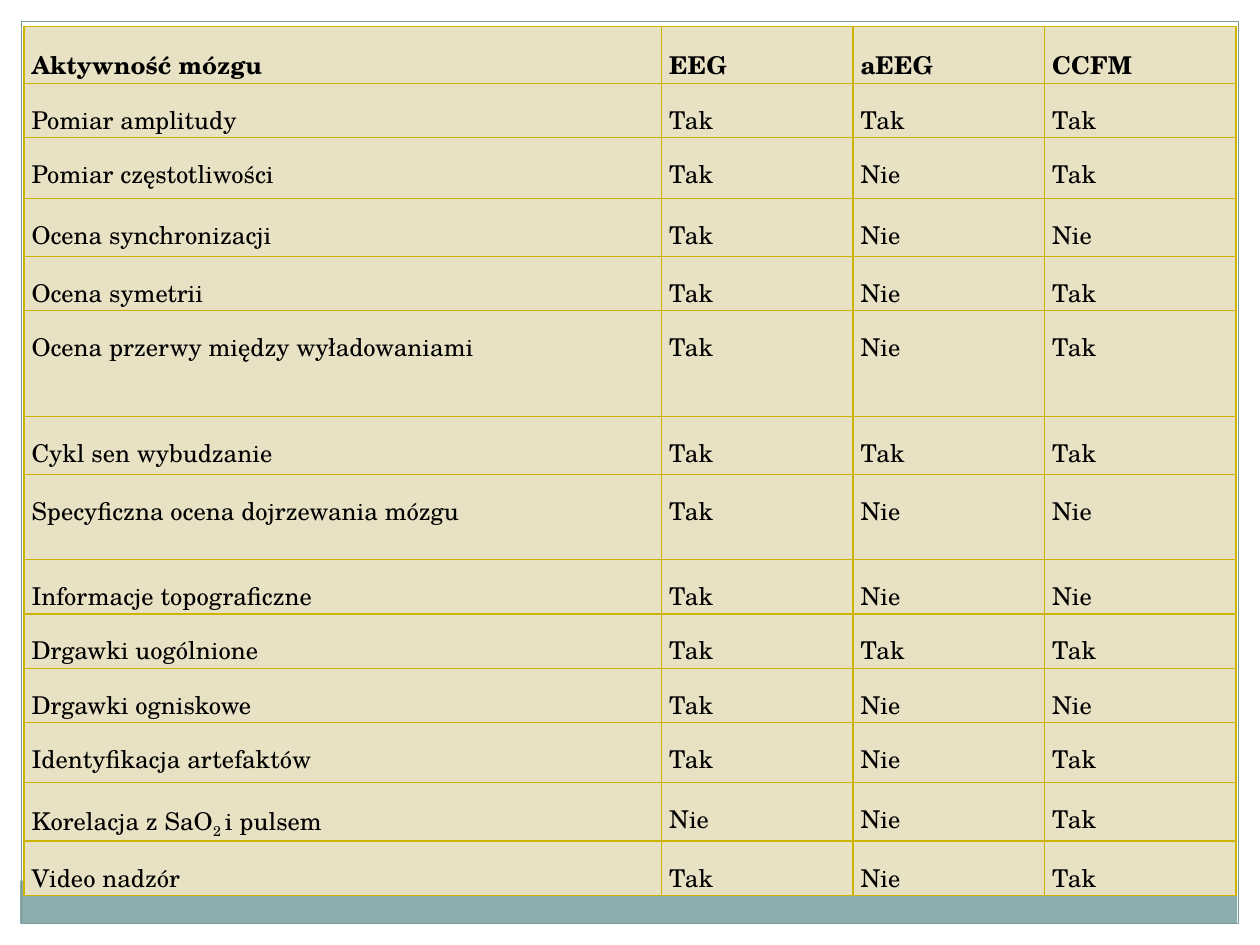
from pptx import Presentation
from pptx.dml.color import RGBColor as RGB
from pptx.enum.shapes import MSO_SHAPE as SHAPE
from pptx.oxml import parse_xml
from pptx.oxml.ns import nsdecls
from pptx.util import Inches, Pt

THEME = {
    "font": "TeX Gyre Schola",
    "size": Pt(14),
    "text": RGB.from_string("000000"),
    "cell": RGB.from_string("E8E1C4"),
    "margin": RGB.from_string("FFFFFF"),
    "band": RGB.from_string("8CADAE"),
    "frame": RGB.from_string("7C999A"),
    "grid": "CCB400",
}
SUBSCRIPT = "-25000"
MARGINS = [(0, 0, 10, 0.17), (9.83, 0, 0.17, 7.5), (0, 0, 0.17, 7.5)]
HEADER = ("Aktywność mózgu", "EEG", "aEEG", "CCFM")
ROWS = [
    ("Pomiar amplitudy", "Tak", "Tak", "Tak", 0.41),
    ("Pomiar częstotliwości", "Tak", "Nie", "Tak", 0.48),
    ("Ocena synchronizacji", "Tak", "Nie", "Nie", 0.46),
    ("Ocena symetrii", "Tak", "Nie", "Tak", 0.41),
    ("Ocena przerwy między wyładowaniami", "Tak", "Nie", "Tak", 0.84),
    ("Cykl sen wybudzanie", "Tak", "Tak", "Tak", 0.46),
    ("Specyficzna ocena dojrzewania mózgu", "Tak", "Nie", "Nie", 0.68),
    ("Informacje topograficzne", "Tak", "Nie", "Nie", 0.43),
    ("Drgawki uogólnione", "Tak", "Tak", "Tak", 0.41),
    ("Drgawki ogniskowe", "Tak", "Nie", "Nie", 0.41),
    ("Identyfikacja artefaktów", "Tak", "Nie", "Tak", 0.48),
    (("Korelacja z SaO", "2 ", "i pulsem"), "Nie", "Nie", "Tak", 0.46),
    ("Video nadzór", "Tak", "Nie", "Tak", 0.41),
]
TABLE_ROWS = [(*HEADER, 0.41), *ROWS]
COL_WIDTHS = (5.06, 1.52, 1.52, 1.52)


def add_rect(slide, box, fill=None, line=None):
    """Add a plain rectangle with an optional fill and outline."""
    s = slide.shapes.add_shape(SHAPE.RECTANGLE, *map(Inches, box))
    s.shadow.inherit = False
    if fill is None:
        s.fill.background()
    else:
        s.fill.solid()
        s.fill.fore_color.rgb = fill
    if line is None:
        s.line.fill.background()
    else:
        s.line.color.rgb = line
        s.line.width = Pt(0.75)


def add_borders(cell):
    """Draw the four grid lines of a cell."""
    tcPr = cell._tc.get_or_add_tcPr()
    for i, side in enumerate(("lnL", "lnR", "lnT", "lnB")):
        tcPr.insert(i, parse_xml(
            f'<a:{side} {nsdecls("a")} w="{Pt(0.75)}"><a:solidFill>'
            f'<a:srgbClr val="{THEME["grid"]}"/></a:solidFill></a:{side}>'))


def fill_cell(cell, content, bold):
    """Write and style one cell; the middle part of a tuple is a subscript."""
    cell.margin_left = cell.margin_right = Inches(0.06)
    cell.margin_top = cell.margin_bottom = 0
    cell.fill.solid()
    cell.fill.fore_color.rgb = THEME["cell"]
    add_borders(cell)
    p = cell.text_frame.paragraphs[0]
    p.line_spacing = 1.5
    p.font.name = THEME["font"]
    p.font.size = THEME["size"]
    p.font.bold = bold
    p.font.color.rgb = THEME["text"]
    parts = (content,) if isinstance(content, str) else content
    for i, text in enumerate(parts):
        r = p.add_run()
        r.text = text
        if i == 1:
            r.font._element.set("baseline", SUBSCRIPT)


def add_comparison_table(slide):
    """Add the table that compares the monitoring methods."""
    heights = [row[-1] for row in TABLE_ROWS]
    table = slide.shapes.add_table(
        len(TABLE_ROWS), len(COL_WIDTHS), Inches(0.19), Inches(0.21),
        Inches(sum(COL_WIDTHS)), Inches(sum(heights))).table
    table.first_row = table.horz_banding = False
    for col, width in zip(table.columns, COL_WIDTHS):
        col.width = Inches(width)
    for i, (*contents, height) in enumerate(TABLE_ROWS):
        table.rows[i].height = Inches(height)
        for j, content in enumerate(contents):
            fill_cell(table.cell(i, j), content, bold=i == 0)


def main():
    """Build the slide and save it."""
    prs = Presentation()
    prs.slide_width, prs.slide_height = Inches(10), Inches(7.5)
    slide = prs.slides.add_slide(prs.slide_layouts[6])
    for box in MARGINS:
        add_rect(slide, box, fill=THEME["margin"])
    add_rect(slide, (0.16, 6.99, 9.66, 0.34), fill=THEME["band"])
    add_rect(slide, (0.17, 0.17, 9.66, 7.16), line=THEME["frame"])
    add_comparison_table(slide)
    prs.save("out.pptx")


if __name__ == "__main__":
    main()
